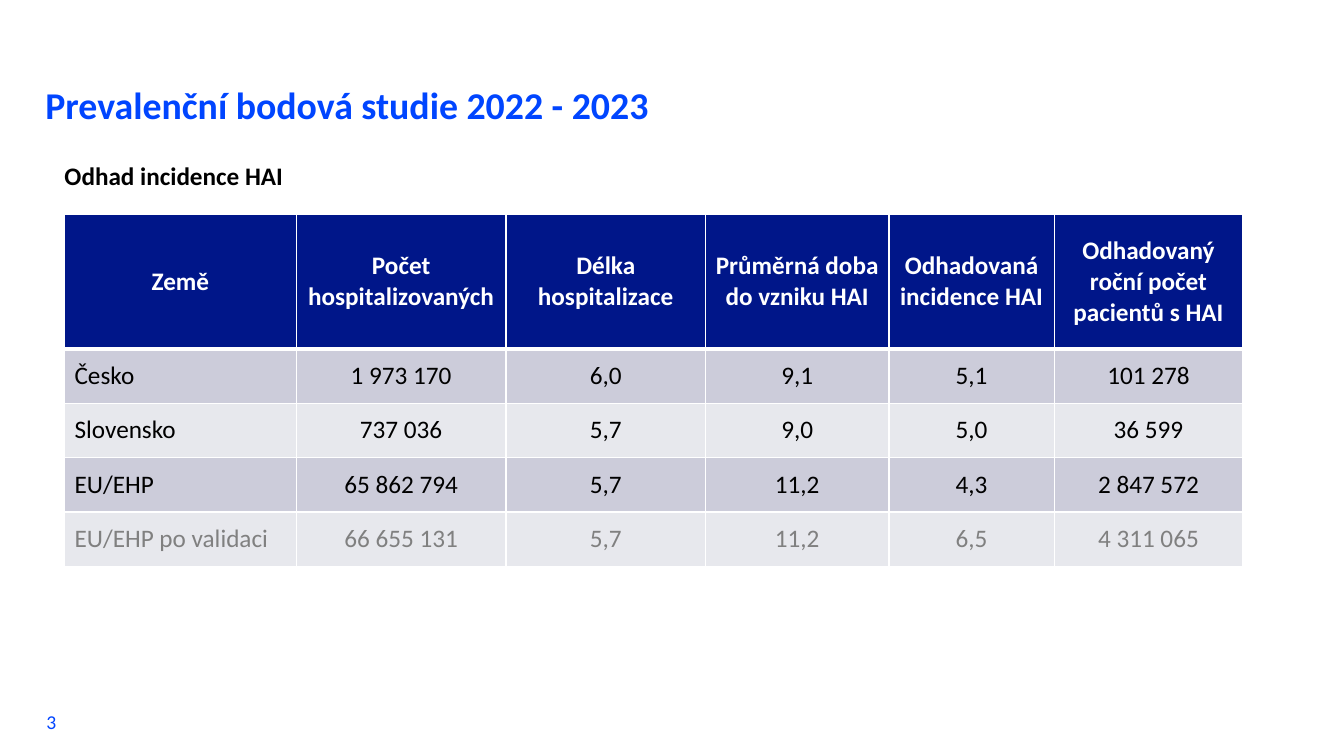
from dataclasses import dataclass

from lxml.etree import SubElement
from pptx import Presentation
from pptx.dml.color import RGBColor
from pptx.enum.text import MSO_ANCHOR as Anchor, PP_ALIGN as Align
from pptx.oxml.ns import qn
from pptx.slide import Slide
from pptx.table import _Cell as Cell
from pptx.text.text import TextFrame
from pptx.util import Inches, Length, Pt

WIDTH, HEIGHT = Inches(13.33), Inches(7.5)
FONT = "Calibri"
BLUE = RGBColor(0x00, 0x45, 0xFF)
NAVY = RGBColor(0x00, 0x16, 0x89)
BLACK = RGBColor(0x00, 0x00, 0x00)
WHITE = RGBColor(0xFF, 0xFF, 0xFF)
GREY = RGBColor(0x80, 0x80, 0x80)
DARK_BAND = RGBColor(0xCC, 0xCC, 0xDA)
LIGHT_BAND = RGBColor(0xE7, 0xE8, 0xED)


def across(percent: float) -> Length:
    return Length(round(WIDTH * percent / 100))


def down(percent: float) -> Length:
    return Length(round(HEIGHT * percent / 100))


@dataclass(frozen=True)
class Label:
    """A line of text; its box is in percent of the slide's size."""
    text: str
    left: float
    top: float
    width: float
    height: float
    size: float
    color: RGBColor = BLUE
    bold: bool = False
    anchor: Anchor = Anchor.TOP


@dataclass(frozen=True)
class Row:
    values: tuple[str, ...]
    fill: RGBColor
    color: RGBColor = BLACK
    header: bool = False
    height: float = 7.2


LABELS = (
    Label("Prevalenční bodová studie 2022 - 2023", 3.38, 5.87, 93.23, 10.93,
          size=27, bold=True, anchor=Anchor.BOTTOM),
    Label("Odhad incidence HAI", 4.8, 21.2, 80.7, 5.47,
          size=18, color=BLACK, bold=True),
    Label("3", 3.45, 94.13, 3.98, 2.53, size=14, anchor=Anchor.MIDDLE),
)

TABLE_LEFT, TABLE_TOP = 4.8, 28.4
COLUMN_WIDTHS = (17.25, 15.6, 14.85, 13.65, 12.3, 14.03)
ROWS = (
    Row(("Země", "Počet hospitalizovaných", "Délka hospitalizace",
         "Průměrná doba do vzniku HAI", "Odhadovaná incidence HAI",
         "Odhadovaný roční počet pacientů s HAI"),
        NAVY, WHITE, header=True, height=17.73),
    Row(("Česko", "1 973 170", "6,0", "9,1", "5,1", "101 278"), DARK_BAND),
    Row(("Slovensko", "737 036", "5,7", "9,0", "5,0", "36 599"), LIGHT_BAND),
    Row(("EU/EHP", "65 862 794", "5,7", "11,2", "4,3", "2 847 572"), DARK_BAND),
    Row(("EU/EHP po validaci", "66 655 131", "5,7", "11,2", "6,5", "4 311 065"),
        LIGHT_BAND, GREY),
)


def write(tf: TextFrame, text: str, *, size: float, color: RGBColor,
          bold: bool = False, align: Align = Align.LEFT) -> None:
    tf.word_wrap = True
    p = tf.paragraphs[0]
    p.alignment = align
    r = p.add_run()
    r.text = text
    r.font.name, r.font.size, r.font.bold = FONT, Pt(size), bold
    r.font.color.rgb = color


def add_label(s: Slide, label: Label) -> None:
    sp = s.shapes.add_textbox(across(label.left), down(label.top),
                              across(label.width), down(label.height))
    tf = sp.text_frame
    tf.margin_left = tf.margin_top = tf.margin_right = tf.margin_bottom = 0
    tf.vertical_anchor = label.anchor
    write(tf, label.text, size=label.size, color=label.color, bold=label.bold)


def set_borders(cell: Cell, *, top: float, bottom: float) -> None:
    """Draw white cell borders; top and bottom are line widths in points."""
    tc_pr = cell._tc.get_or_add_tcPr()
    for side, width in (("L", 1), ("R", 1), ("T", top), ("B", bottom)):
        line = SubElement(tc_pr, qn(f"a:ln{side}"), w=str(Pt(width)))
        fill = SubElement(line, qn("a:solidFill"))
        SubElement(fill, qn("a:srgbClr"), val=str(WHITE))


def add_incidence_table(s: Slide) -> None:
    table = s.shapes.add_table(
        len(ROWS), len(COLUMN_WIDTHS), across(TABLE_LEFT), down(TABLE_TOP),
        across(sum(COLUMN_WIDTHS)), down(sum(row.height for row in ROWS))).table
    for column, width in zip(table.columns, COLUMN_WIDTHS):
        column.width = across(width)
    for i, row in enumerate(ROWS):
        table.rows[i].height = down(row.height)
        for j, value in enumerate(row.values):
            cell = table.cell(i, j)
            set_borders(cell, top=3 if i == 1 else 1,
                        bottom=3 if row.header else 1)
            cell.fill.solid()
            cell.fill.fore_color.rgb = row.fill
            cell.vertical_anchor = Anchor.MIDDLE
            centred = row.header or j > 0
            write(cell.text_frame, value, size=18, color=row.color,
                  bold=row.header, align=Align.CENTER if centred else Align.LEFT)


def main() -> None:
    prs = Presentation()
    prs.slide_width, prs.slide_height = WIDTH, HEIGHT
    s = prs.slides.add_slide(prs.slide_layouts[6])
    for label in LABELS:
        add_label(s, label)
    add_incidence_table(s)
    prs.save("out.pptx")


if __name__ == "__main__":
    main()
